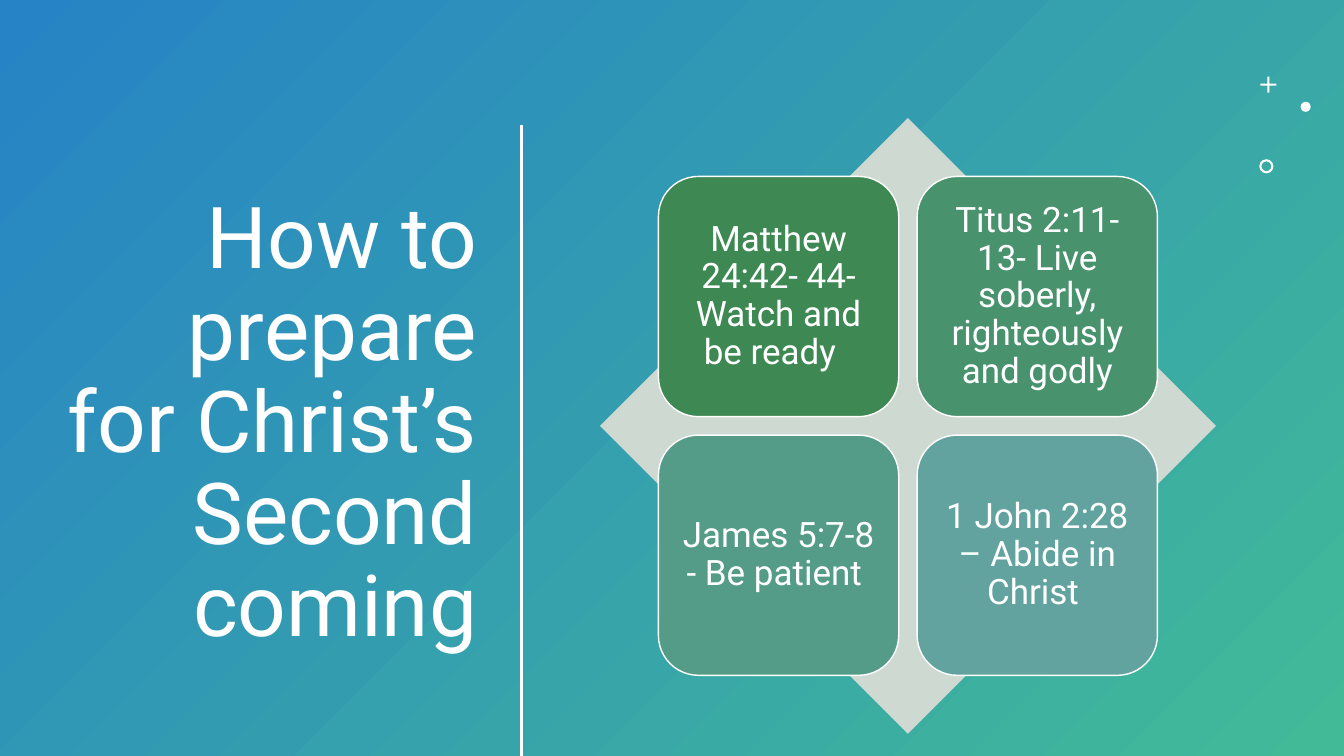
import pptx
import pptx.util
import pptx.dml.color
import pptx.enum.shapes
import pptx.enum.text
import pptx.oxml

WIDTH, HEIGHT = 13.33, 7.5
FONT, WHITE = "Roboto", "FFFFFF"
GRADIENT = ("2683C6", "42BA97")
TITLE = "How to prepare for Christ’s Second coming"
TITLE_BOX = (0.52, 1.16, 4.31, 6.11)
DIVIDER = (5.17, 1.24, 5.17, HEIGHT)
DIAMOND = (5.95, 1.17, 6.11, 6.11)
DIAMOND_COLOUR = "CEDAD1"
TILE_SHARE, MARGIN_SHARE, PITCH_SHARE = 0.39, 0.095, 0.42
TILES = [
    ("Matthew 24:42- 44- Watch and be ready  ", "3E8853"),
    ("Titus 2:11-13- Live soberly, righteously and godly", "49926E"),
    ("James 5:7-8 - Be patient ", "549C88"),
    ("1 John 2:28 – Abide in Christ ", "62A39F"),
]
ORNAMENTS = [
    ("CROSS", (12.5, 0.76, 0.16, 0.16), 0.44),
    ("OVAL", (12.9, 1.01, 0.1, 0.1), None),
    ("DONUT", (12.49, 1.58, 0.14, 0.14), 0.15),
]


def colour(value):
    """Turn a hex string into a colour."""
    return pptx.dml.color.RGBColor.from_string(value)


def inches(values):
    """Convert numbers to lengths in inches."""
    return [pptx.util.Inches(value) for value in values]


def add_preset(slide, kind, box, fill=None, outline=None):
    """Add a preset shape without shadow."""
    preset = getattr(pptx.enum.shapes.MSO_SHAPE, kind)
    shape = slide.shapes.add_shape(preset, *inches(box))
    shape.shadow.inherit = False
    if fill:
        shape.fill.solid()
        shape.fill.fore_color.rgb = colour(fill)
    if outline:
        shape.line.color.rgb = colour(outline)
        shape.line.width = pptx.util.Pt(1)
    else:
        shape.line.fill.background()
    return shape


def write(shape, text, size, alignment, inset):
    """Write one vertically centred paragraph into a shape."""
    frame = shape.text_frame
    frame.word_wrap = True
    frame.vertical_anchor = pptx.enum.text.MSO_ANCHOR.MIDDLE
    frame.margin_left = frame.margin_right = pptx.util.Inches(0.1)
    frame.margin_top = frame.margin_bottom = pptx.util.Inches(inset)
    paragraph = frame.paragraphs[0]
    paragraph.alignment = alignment
    paragraph.line_spacing = 0.9
    run = paragraph.add_run()
    run.text = text
    run.font.name = FONT
    run.font.size = pptx.util.Pt(size)
    run.font.color.rgb = colour(WHITE)


def add_background(slide):
    """Cover the slide with a diagonal gradient."""
    fill = add_preset(slide, "RECTANGLE", (0, 0, WIDTH, HEIGHT)).fill
    fill.gradient()
    fill.gradient_angle = 315
    for stop, value, position in zip(fill.gradient_stops, GRADIENT, (0, 1)):
        stop.color.rgb = colour(value)
        stop.position = position


def add_divider(slide):
    """Draw the vertical line beside the title."""
    line = slide.shapes.add_connector(
        pptx.enum.shapes.MSO_CONNECTOR.STRAIGHT, *inches(DIVIDER))
    line.line.color.rgb = colour(WHITE)
    line.line.width = pptx.util.Pt(2)
    properties = line.line._get_or_add_ln().getparent()
    properties.append(pptx.oxml.parse_xml(
        '<a:effectLst xmlns:a="http://schemas.openxmlformats.org/drawingml/2006/main"/>'))


def add_matrix(slide):
    """Lay the four tiles over the diamond."""
    add_preset(slide, "DIAMOND", DIAMOND, DIAMOND_COLOUR)
    left, top, side, _ = DIAMOND
    tile_side = side * TILE_SHARE
    for index, (text, fill) in enumerate(TILES):
        row, column = divmod(index, 2)
        x = left + side * (MARGIN_SHARE + column * PITCH_SHARE)
        y = top + side * (MARGIN_SHARE + row * PITCH_SHARE)
        tile = add_preset(slide, "ROUNDED_RECTANGLE", (x, y, tile_side, tile_side), fill, WHITE)
        write(tile, text, 25, pptx.enum.text.PP_ALIGN.CENTER, 0.1)


def main():
    """Build and save the slide."""
    presentation = pptx.Presentation()
    presentation.slide_width, presentation.slide_height = inches((WIDTH, HEIGHT))
    slide = presentation.slides.add_slide(presentation.slide_layouts[6])
    add_background(slide)
    title = slide.shapes.add_textbox(*inches(TITLE_BOX))
    write(title, TITLE, 61, pptx.enum.text.PP_ALIGN.RIGHT, 0.05)
    for kind, box, adjustment in ORNAMENTS:
        ornament = add_preset(slide, kind, box, WHITE)
        if adjustment:
            ornament.adjustments[0] = adjustment
    add_divider(slide)
    add_matrix(slide)
    presentation.save("out.pptx")


if __name__ == "__main__":
    main()
